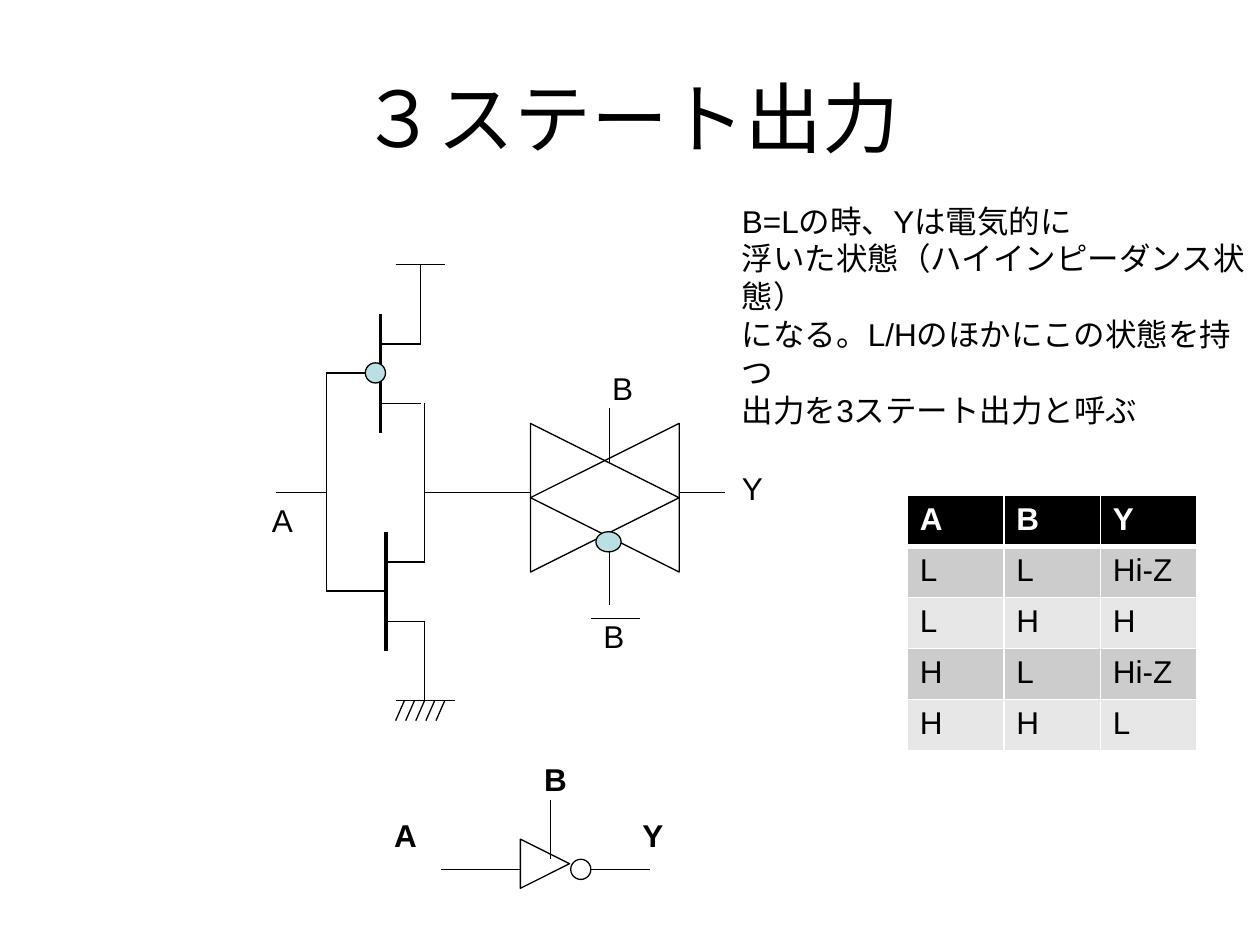
import pptx
import pptx.dml.color
import pptx.enum.shapes
import pptx.enum.text
import pptx.oxml
import pptx.oxml.ns
import pptx.util
from dataclasses import dataclass
from typing import Any
from lxml import etree

Inches = pptx.util.Inches
Pt = pptx.util.Pt
Kind = pptx.enum.shapes.MSO_SHAPE
FONT = "Arial"
BLACK = pptx.dml.color.RGBColor(0x00, 0x00, 0x00)
WHITE = pptx.dml.color.RGBColor(0xFF, 0xFF, 0xFF)
BUBBLE_BLUE = pptx.dml.color.RGBColor(0xBB, 0xE0, 0xE3)
BAND_DARK = pptx.dml.color.RGBColor(0xCC, 0xCC, 0xCC)
BAND_LIGHT = pptx.dml.color.RGBColor(0xE7, 0xE7, 0xE7)
NOTE_LINES = [
    "B=Lの時、Yは電気的に",
    "浮いた状態（ハイインピーダンス状態）",
    "になる。L/Hのほかにこの状態を持つ",
    "出力を3ステート出力と呼ぶ",
]
TRUTH_ROWS = ["A B Y", "L L Hi-Z", "L H H", "H L Hi-Z", "H H L"]


def format_runs(frame, size=18, color=BLACK, bold=False):
    for para in frame.paragraphs:
        for span in para.runs:
            span.font.name = FONT
            span.font.size = Pt(size)
            span.font.bold = bold
            span.font.color.rgb = color


@dataclass
class Region:
    """An area of the page; its parts are placed from its top left corner, in inches."""
    page: Any
    left: float
    top: float

    def place(self, x, y):
        return Inches(self.left + x), Inches(self.top + y)

    def wire(self, x1, y1, x2, y2, width=0.75):
        line = self.page.shapes.add_connector(
            pptx.enum.shapes.MSO_CONNECTOR.STRAIGHT, *self.place(x1, y1), *self.place(x2, y2))
        line.line.color.rgb = BLACK
        line.line.width = Pt(width)
        etree.SubElement(line._element.spPr, pptx.oxml.ns.qn("a:effectLst"))

    def symbol(self, kind, x, y, width, height, rotation=0, fill=None):
        shape = self.page.shapes.add_shape(
            kind, *self.place(x, y), Inches(width), Inches(height))
        shape.shadow.inherit = False
        shape.rotation = rotation
        shape.line.color.rgb = BLACK
        shape.line.width = Pt(0.75)
        if fill is None:
            shape.fill.background()
        else:
            shape.fill.solid()
            shape.fill.fore_color.rgb = fill

    def label(self, text, x, y, bold=False):
        box = self.page.shapes.add_textbox(*self.place(x, y), Inches(0.37), Inches(0.4))
        frame = box.text_frame
        frame.word_wrap = False
        frame.auto_size = pptx.enum.text.MSO_AUTO_SIZE.SHAPE_TO_FIT_TEXT
        frame.text = text
        format_runs(frame, bold=bold)


def add_title(page, left, top, width, height):
    title = page.shapes.title
    title.left, title.top = Inches(left), Inches(top)
    title.width, title.height = Inches(width), Inches(height)
    frame = title.text_frame
    frame.text = "３ステート出力"
    frame.vertical_anchor = pptx.enum.text.MSO_ANCHOR.MIDDLE
    frame.paragraphs[0].alignment = pptx.enum.text.PP_ALIGN.CENTER
    format_runs(frame, 44)


def add_transistor(area, channel, top, terminal, gate_from, gate_to):
    area.wire(channel, top, channel, top + 0.95, 2.25)
    for tap in (0.24, 0.71):
        area.wire(channel, top + tap, terminal, top + tap)
    area.wire(gate_from, top + 0.47, gate_to, top + 0.47)


def add_inverter(page, left, top):
    area = Region(page, left, top)
    # Transistors and their shared gate wire
    add_transistor(area, 0.96, 0.39, 1.28, 0.53, 0.84)
    area.symbol(Kind.OVAL, 0.84, 0.78, 0.16, 0.16, fill=BUBBLE_BLUE)
    add_transistor(area, 1, 2.12, 1.31, 0.53, 1)
    area.wire(0.53, 0.86, 0.53, 2.59)
    # Supply
    area.wire(1.28, 0.62, 1.28, 0)
    area.wire(1.08, 0, 1.47, 0)
    # Input and output
    area.wire(0.13, 1.81, 0.53, 1.81)
    area.wire(1.31, 2.36, 1.31, 1.1)
    area.wire(1.31, 1.81, 1.71, 1.81)
    area.label("A", 0, 1.83)
    # Ground
    area.wire(1.31, 3.46, 1.31, 2.83)
    area.wire(1.08, 3.46, 1.55, 3.46)
    for step in range(5):
        x = 1.08 + 0.08 * step
        area.wire(x + 0.07, 3.46, x, 3.62)


def add_transmission_gate(page, left, top):
    area = Region(page, left, top)
    for rotation in (270, 90):
        area.symbol(Kind.FLOWCHART_MERGE, 0.47, 0.48, 1.18, 1.18, rotation)
    # Input and output
    area.wire(0, 1.03, 0.47, 1.03)
    area.wire(1.65, 1.03, 2.01, 1.03)
    area.label("Y", 2.05, 0.79)
    # Control B and its complement
    area.symbol(Kind.OVAL, 1.01, 1.32, 0.16, 0.2, 270, BUBBLE_BLUE)
    area.wire(1.1, 0.36, 1.1, 0.79)
    area.wire(1.1, 1.5, 1.1, 1.92)
    area.label("B", 1.02, 0)
    area.label("B", 0.95, 1.97)
    area.wire(0.95, 2.03, 1.34, 2.03)


def add_gate_symbol(page, left, top):
    area = Region(page, left, top)
    area.symbol(Kind.ISOSCELES_TRIANGLE, 1.1, 0.68, 0.39, 0.39, 90)
    area.wire(1.34, 0.37, 1.34, 0.84)
    area.wire(0.47, 0.92, 1.1, 0.92)
    area.wire(1.5, 0.92, 2.13, 0.92)
    area.symbol(Kind.OVAL, 1.5, 0.84, 0.16, 0.16, fill=WHITE)
    for text, x, y in (("B", 1.19, 0), ("A", 0, 0.45), ("Y", 1.97, 0.45)):
        area.label(text, x, y, bold=True)


def set_borders(cell, header_below, is_header):
    widths = {"L": 1, "R": 1, "T": 3 if header_below else 1, "B": 3 if is_header else 1}
    properties = cell._tc.get_or_add_tcPr()
    for index, (side, width) in enumerate(widths.items()):
        properties.insert(index, pptx.oxml.parse_xml(
            f'<a:ln{side} {pptx.oxml.ns.nsdecls("a")} w="{Pt(width)}">'
            f'<a:solidFill><a:srgbClr val="{WHITE}"/></a:solidFill></a:ln{side}>'))


def add_truth_table(page, left, top, width, height):
    rows = [line.split() for line in TRUTH_ROWS]
    table = page.shapes.add_table(
        len(rows), len(rows[0]), Inches(left), Inches(top),
        Inches(width), Inches(height)).table
    for row_index, row in enumerate(rows):
        is_header = row_index == 0
        band = BAND_DARK if row_index % 2 else BAND_LIGHT
        for column_index, text in enumerate(row):
            cell = table.cell(row_index, column_index)
            cell.text = text
            cell.fill.solid()
            cell.fill.fore_color.rgb = BLACK if is_header else band
            format_runs(cell.text_frame, color=WHITE if is_header else BLACK, bold=is_header)
            set_borders(cell, row_index == 1, is_header)


def add_note(page, left, top, width, height):
    box = page.shapes.add_textbox(Inches(left), Inches(top), Inches(width), Inches(height))
    frame = box.text_frame
    frame.word_wrap = True
    frame.text = "\n".join(NOTE_LINES)
    format_runs(frame)


def main():
    deck = pptx.Presentation()
    deck.slide_width, deck.slide_height = Inches(10), Inches(7.5)
    page = deck.slides.add_slide(deck.slide_layouts[5])
    add_title(page, 0.5, 0.3, 9, 1.25)
    add_inverter(page, 2.06, 2.1)
    add_transmission_gate(page, 3.74, 2.88)
    add_gate_symbol(page, 3.03, 5.98)
    add_truth_table(page, 7.2, 3.93, 2.3, 2.03)
    add_note(page, 5.79, 1.55, 4.21, 1.31)
    deck.save("out.pptx")


if __name__ == "__main__":
    main()
